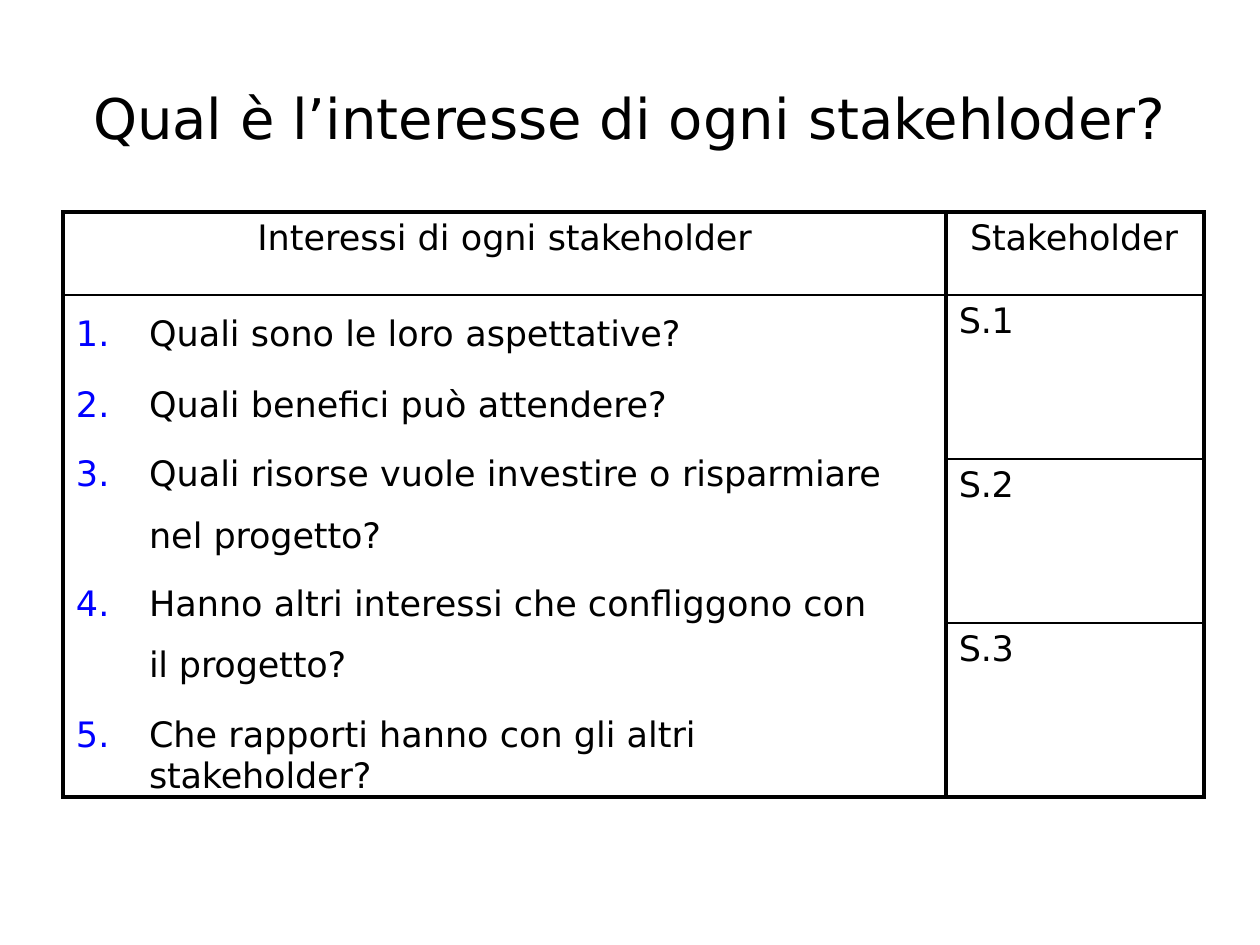
from lxml.etree import SubElement
from pptx import Presentation
from pptx.dml.color import RGBColor
from pptx.enum.text import MSO_ANCHOR as Anchor, MSO_AUTO_SIZE as Auto, PP_ALIGN as Align
from pptx.oxml.ns import qn
from pptx.util import Pt

# Content: each run is (text, letter spacing in 1/100 pt)
TITLE = [("Qual è l’interesse di ogni ", 0), ("stakehloder?", -10)]
HEADS = [
    ([("Interessi di ogni ", 0), ("stakeholder", -10)], Align.CENTER, 0),
    ([("Stakeholder", -10)], Align.LEFT, 24),
]
# Questions: runs, line spacing, space before in pt
ASKS = [
    ([("Quali sono le loro ", 0), ("aspettative?", -10)], 1.0, 0),
    ([("Quali benefici può ", 0), ("attendere?", -10)], 1.0, 17.1),
    ([("Quali risorse vuole investire o ", 0), ("risparmiare ", -10),
      ("nel ", 0), ("progetto?", -10)], 1.5, 5),
    ([("Hanno altri interessi che confliggono con ", 0), ("il ", -20),
      ("progetto?", -10)], 1.5, 4.1),
    ([("Che rapporti hanno con gli altri ", 0), ("stakeholder?", -10)], 1.0, 17.1),
]
HOLDERS = ["S.1", "S.2", "S.3"]

FONT = "DejaVu Sans"
BLACK = RGBColor(0, 0, 0)
BLUE = RGBColor(0, 0, 255)
THICK, THIN = 2.25, 1
COLS = [883, 258]
ROWS = [83, 164, 164, 164]
TEXT_X, HANG = 86, 73


def px(n):
    return round(n * 914400 / 126)


def add_runs(para, runs, size):
    for text, gap in runs:
        run = para.add_run()
        run.text = text
        font = run.font
        font.name, font.size = FONT, Pt(size)
        font.color.rgb = BLACK
        if gap:
            run._r.get_or_add_rPr().set("spc", str(gap))


def indent(para, left, first=0):
    props = para._p.get_or_add_pPr()
    props.set("marL", str(px(left)))
    props.set("indent", str(px(first)))
    return props


def number(para):
    props = indent(para, TEXT_X, -HANG)
    tint = SubElement(props, qn("a:buClr"))
    SubElement(tint, qn("a:srgbClr"), val=str(BLUE))
    SubElement(props, qn("a:buFont"), typeface=FONT)
    SubElement(props, qn("a:buAutoNum"), type="arabicPeriod")
    tabs = SubElement(props, qn("a:tabLst"))
    SubElement(tabs, qn("a:tab"), pos=str(px(TEXT_X)), algn="l")


def set_cell(cell, widths, top=6, right=0):
    cell.margin_left, cell.margin_right = 0, px(right)
    cell.margin_top, cell.margin_bottom = px(top), 0
    cell.vertical_anchor = Anchor.TOP
    props = cell._tc.get_or_add_tcPr()
    for side, width in zip("LRTB", widths):
        if width:
            line = SubElement(props, qn(f"a:ln{side}"), w=str(Pt(width)))
            fill = SubElement(line, qn("a:solidFill"))
            SubElement(fill, qn("a:srgbClr"), val=str(BLACK))
    cell.fill.background()


deck = Presentation()
deck.slide_width, deck.slide_height = px(1260), px(945)
slide = deck.slides.add_slide(deck.slide_layouts[5])

# Title
title = slide.shapes.title
title.left, title.top, title.width, title.height = map(px, (79, 48, 1101, 137))
frame = title.text_frame
frame.margin_left = frame.margin_right = frame.margin_bottom = 0
frame.margin_top = px(35)
frame.vertical_anchor = Anchor.TOP
frame.auto_size = Auto.NONE
frame.word_wrap = True
para = frame.paragraphs[0]
indent(para, 14)
para.alignment = Align.LEFT
add_runs(para, TITLE, 32)

# Table grid
grid = slide.shapes.add_table(len(ROWS), len(COLS), px(63), px(212),
                              px(sum(COLS)), px(sum(ROWS))).table
grid.first_row = grid.horz_banding = False
for col, width in zip(grid.columns, COLS):
    col.width = px(width)
for row, height in zip(grid.rows, ROWS):
    row.height = px(height)
last = len(ROWS) - 1
grid.cell(1, 0).merge(grid.cell(last, 0))

# Header row
for c, (runs, align, left) in enumerate(HEADS):
    cell = grid.cell(0, c)
    set_cell(cell, (THICK, THICK, THICK, THIN))
    para = cell.text_frame.paragraphs[0]
    indent(para, left)
    para.alignment = align
    add_runs(para, runs, 20)

# Numbered questions in the merged cell
cell = grid.cell(1, 0)
set_cell(cell, (THICK, THICK, THIN, THICK), top=19, right=54)
for r in range(2, last + 1):
    set_cell(grid.cell(r, 0), (THICK, THICK, 0, THICK if r == last else 0))
frame = cell.text_frame
for i, (runs, lead, before) in enumerate(ASKS):
    para = frame.add_paragraph() if i else frame.paragraphs[0]
    number(para)
    para.line_spacing = lead
    para.space_before = Pt(before)
    add_runs(para, runs, 20)

# Stakeholder column
for r, name in enumerate(HOLDERS, 1):
    cell = grid.cell(r, 1)
    set_cell(cell, (THICK, THICK, THIN, THICK if r == last else THIN))
    para = cell.text_frame.paragraphs[0]
    indent(para, 13)
    add_runs(para, [(name, -20)], 20)

deck.save("out.pptx")
